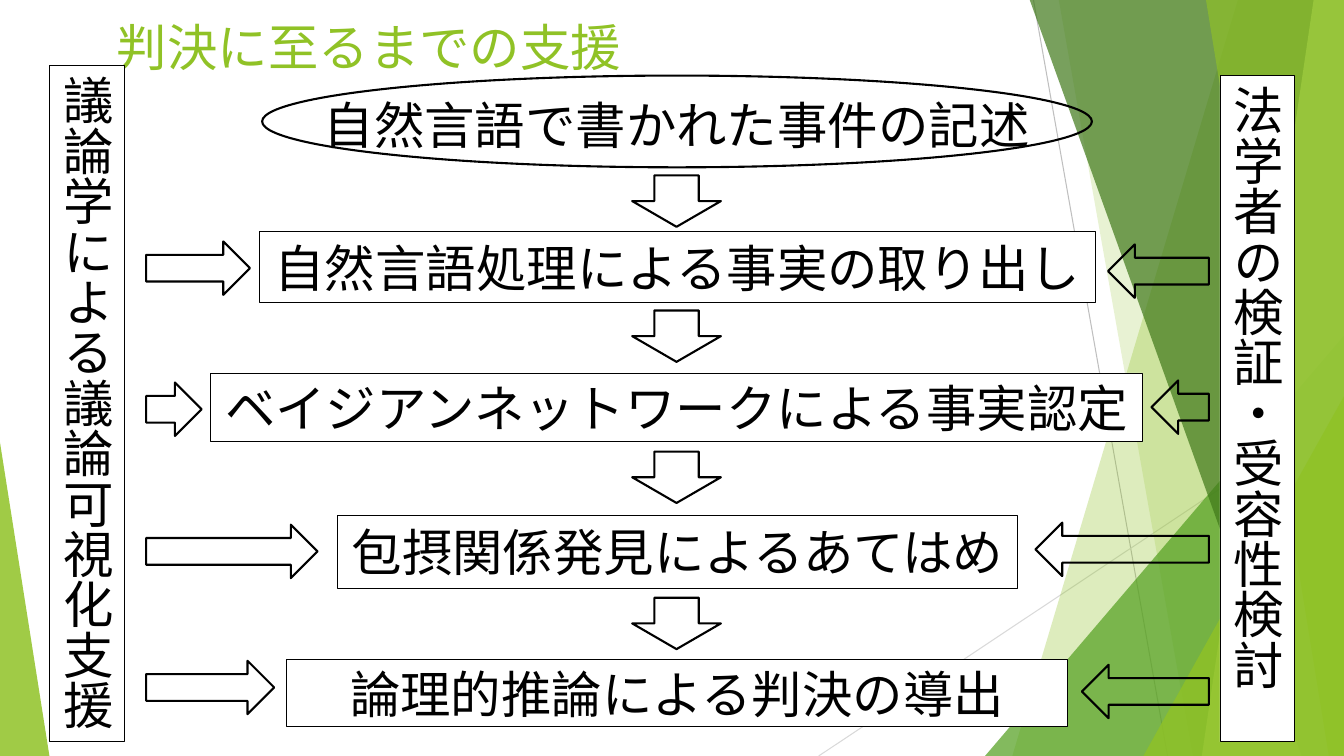
"""Build a slide showing the support steps that lead to a court judgment."""
from lxml.etree import SubElement
from pptx import Presentation
from pptx.dml.color import RGBColor
from pptx.enum.shapes import MSO_CONNECTOR, MSO_SHAPE
from pptx.enum.text import MSO_ANCHOR, MSO_AUTO_SIZE, PP_ALIGN
from pptx.oxml.ns import qn
from pptx.util import Inches, Pt

WIDTH, HEIGHT, TOP = 13.33, 7.5, -0.01


def color(value):
    return RGBColor.from_string(value)


def write_text(shape, text, size=36, font="Noto Sans CJK JP", fill="000000",
               align=PP_ALIGN.CENTER, anchor=MSO_ANCHOR.MIDDLE, vertical=False):
    frame = shape.text_frame
    frame.word_wrap = True
    frame.auto_size = MSO_AUTO_SIZE.NONE
    frame.vertical_anchor = anchor
    if vertical:
        frame._txBody.bodyPr.set("vert", "eaVert")
    paragraph = frame.paragraphs[0]
    paragraph.alignment = align
    run = paragraph.add_run()
    run.text = text
    run.font.size = Pt(size)
    run.font.name = font
    run.font.color.rgb = color(fill)
    east_asian = SubElement(run._r.get_or_add_rPr(), qn("a:ea"))
    east_asian.set("typeface", font)


class SlideBuilder:
    def __init__(self, slide, ink="000000", paper="FFFFFF"):
        self.slide = slide
        self.shapes = slide.shapes
        self.ink = ink
        self.paper = paper

    def tint(self, shape, fill, opacity):
        shape.shadow.inherit = False
        shape.fill.solid()
        shape.fill.fore_color.rgb = color(fill)
        tone = shape.element.spPr.find(".//" + qn("a:srgbClr"))
        SubElement(tone, qn("a:alpha")).set("val", str(opacity * 1000))
        shape.line.fill.background()

    def ray(self, start, end, fill):
        line = self.shapes.add_connector(
            MSO_CONNECTOR.STRAIGHT, *(Inches(value) for value in start + end))
        line.line.color.rgb = color(fill)
        line.line.width = Pt(0.75)
        SubElement(line.element.spPr, qn("a:effectLst"))

    def band(self, top_x, bottom_x, fill, opacity):
        corners = [(top_x, TOP), (WIDTH, TOP), (WIDTH, HEIGHT), (bottom_x, HEIGHT)]
        points = [(Inches(x), Inches(y)) for x, y in corners]
        builder = self.shapes.build_freeform(*points[0])
        builder.add_line_segments(points[1:], close=True)
        self.tint(builder.convert_to_shape(), fill, opacity)

    def corner(self, left, top, width, apex, fill, opacity):
        shape = self.shapes.add_shape(
            MSO_SHAPE.ISOSCELES_TRIANGLE, Inches(left), Inches(top),
            Inches(width), Inches(HEIGHT - top))
        shape.adjustments[0] = apex
        self.tint(shape, fill, opacity)

    def title(self, text, left, top, width, height):
        title = self.shapes.title
        title.left, title.top = Inches(left), Inches(top)
        title.width, title.height = Inches(width), Inches(height)
        title.element.getparent().append(title.element)
        write_text(title, text, font="Cabin", fill="90C226",
                   align=PP_ALIGN.LEFT, anchor=MSO_ANCHOR.TOP)

    def outline(self, kind, left, top, width, height, weight=1.5, filled=False):
        shape = self.shapes.add_shape(
            kind, Inches(left), Inches(top), Inches(width), Inches(height))
        shape.shadow.inherit = False
        if filled:
            shape.fill.solid()
            shape.fill.fore_color.rgb = color(self.paper)
        else:
            shape.fill.background()
        shape.line.color.rgb = color(self.ink)
        shape.line.width = Pt(weight)
        return shape

    def box(self, text, left, top, width, height, vertical=False):
        shape = self.outline(MSO_SHAPE.RECTANGLE, left, top, width, height, 0.5, True)
        write_text(shape, text, vertical=vertical)

    def label(self, text, left, top, width, height):
        shape = self.shapes.add_textbox(
            Inches(left), Inches(top), Inches(width), Inches(height))
        write_text(shape, text)

    def side_arrow(self, center_x, center_y, length, rotation, thickness=0.53):
        shape = self.outline(
            MSO_SHAPE.DOWN_ARROW, center_x - thickness / 2,
            center_y - length / 2, thickness, length)
        shape.rotation = rotation


def main():
    presentation = Presentation()
    presentation.slide_width = Inches(WIDTH)
    presentation.slide_height = Inches(HEIGHT)
    builder = SlideBuilder(presentation.slides.add_slide(presentation.slide_layouts[5]))

    builder.ray((10.25, 0), (11.58, HEIGHT), "BFBFBF")
    builder.ray((WIDTH, 4.03), (8.12, HEIGHT), "D9D9D9")
    builder.band(12.28, 10.04, "90C226", 30)
    builder.band(10.5, 11.83, "90C226", 20)
    builder.corner(9.77, 3.33, 3.56, 1, "54A021", 72)
    builder.band(10.21, 12.91, "3F7819", 70)
    builder.band(13.03, 11.92, "C0E474", 70)
    builder.band(11.96, 13.18, "90C226", 65)
    builder.corner(11.34, 3.93, 1.99, 1, "90C226", 80)
    builder.corner(0, 4.39, 0.49, 0, "90C226", 85)

    builder.title("判決に至るまでの支援", 1.06, 0.11, 11.5, 0.81)

    steps = [
        ("自然言語処理による事実の取り出し", 2.57, 2.3, 8.29, 0.7),
        ("ベイジアンネットワークによる事実認定", 2.09, 3.7, 9.24, 0.68),
        ("包摂関係発見によるあてはめ", 3.35, 5.11, 6.74, 0.73),
        ("論理的推論による判決の導出", 2.84, 6.54, 7.75, 0.67),
    ]
    for step in steps:
        builder.box(*step)
    for top in (1.74, 3.08, 4.48, 5.93):
        builder.outline(MSO_SHAPE.DOWN_ARROW, 6.27, top, 0.88, 0.51, filled=True)

    builder.outline(MSO_SHAPE.OVAL, 2.6, 0.75, 8.23, 0.91)
    builder.label("自然言語で書かれた事件の記述", 2.82, 0.87, 7.78, 0.72)

    left_arrows = [(2.66, 1.03), (4.06, 0.55), (5.47, 1.7), (6.82, 1.27)]
    for center_y, length in left_arrows:
        builder.side_arrow(1.45 + length / 2, center_y, length, 270)
    right_arrows = [(2.69, 1), (4.04, 0.57), (5.45, 1.72), (6.86, 1.26)]
    for center_y, length in right_arrows:
        builder.side_arrow(11.99 - length / 2, center_y, length, 90)

    builder.box("法学者の検証・受容性検討", 12.1, 0.75, 0.74, 6.61, vertical=True)
    builder.box("議論学による議論可視化支援", 0.49, 0.65, 0.74, 6.71, vertical=True)

    presentation.save("out.pptx")


if __name__ == "__main__":
    main()
